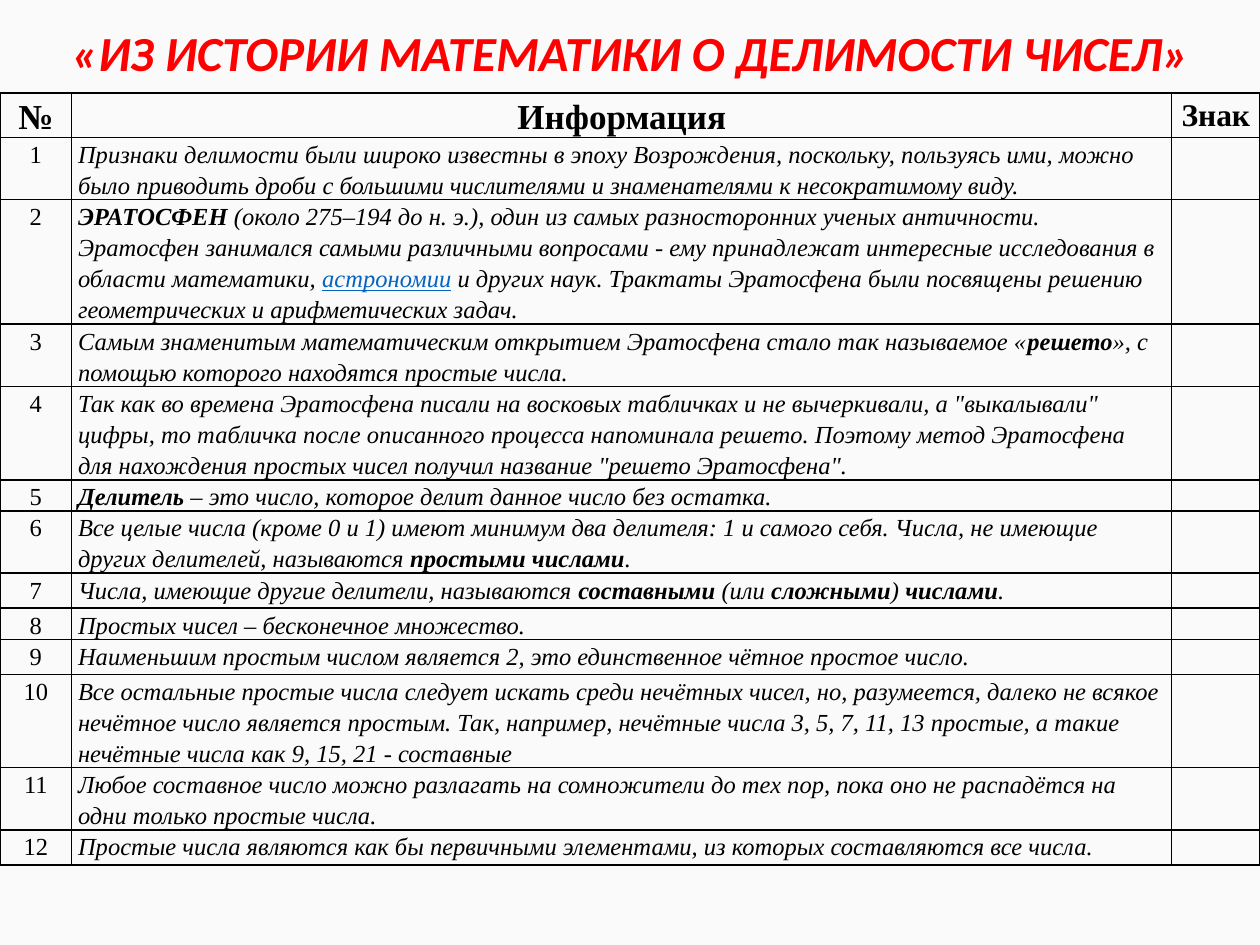
import pptx
import pptx.dml.color
import pptx.enum.text
import pptx.oxml.ns
import pptx.util
from lxml import etree

Pt = pptx.util.Pt
qn = pptx.oxml.ns.qn
ALIGN = pptx.enum.text.PP_ALIGN
ANCHOR = pptx.enum.text.MSO_ANCHOR

TITLE = "«ИЗ ИСТОРИИ МАТЕМАТИКИ О ДЕЛИМОСТИ ЧИСЕЛ»"
HEADINGS = [("№", 20), ("Информация", 20), ("Знак", 18)]
COLUMN_WIDTHS = [41, 628.6, 50.4]
HEADER_HEIGHT = 10
# Row height and text; *...* marks bold words, _..._ marks an underlined term.
FACTS = [
    (30, "Признаки делимости были широко известны в эпоху Возрождения, поскольку, "
         "пользуясь ими, можно было приводить дроби с большими числителями "
         "и знаменателями к несократимому виду."),
    (50, "*ЭРАТОСФЕН* (около 275–194 до н. э.), один из самых разносторонних ученых "
         "античности. Эратосфен занимался самыми различными вопросами - ему принадлежат "
         "интересные исследования в области математики, _астрономии_ и других наук. "
         "Трактаты Эратосфена были посвящены решению геометрических и арифметических задач."),
    (20, "Самым знаменитым математическим открытием Эратосфена стало так называемое "
         "«*решето*», с помощью которого находятся простые числа."),
    (40, "Так как во времена Эратосфена писали на восковых табличках и не вычеркивали, "
         "а \"выкалывали\" цифры, то табличка после описанного процесса напоминала решето. "
         "Поэтому метод Эратосфена для нахождения простых чисел получил название "
         "\"решето Эратосфена\"."),
    (10, "*Делитель* – это число, которое делит данное число без остатка."),
    (30, "Все целые числа (кроме 0 и 1) имеют минимум два делителя: 1 и самого себя. "
         "Числа, не имеющие других делителей, называются *простыми числами*."),
    (20, "Числа, имеющие другие делители, называются *составными* (или *сложными*) *числами*."),
    (10, "Простых чисел – бесконечное множество."),
    (20, "Наименьшим простым числом является 2, это единственное чётное простое число."),
    (40, "Все остальные простые числа следует искать среди нечётных чисел, но, разумеется, "
         "далеко не всякое нечётное число является простым. Так, например, нечётные числа "
         "3, 5, 7, 11, 13 простые, а такие нечётные числа как 9, 15, 21 - составные"),
    (20, "Любое составное число можно разлагать на сомножители до тех пор, пока оно "
         "не распадётся на одни только простые числа."),
    (20, "Простые числа являются как бы первичными элементами, из которых составляются "
         "все числа."),
]


def color(value):
    return pptx.dml.color.RGBColor.from_string(value)


class SlideBuilder:
    ink = "000000"
    accent = "FF0000"
    term = "0563C1"
    background = "FAFAFA"
    title_font = "Calibri"
    body_font = "Times New Roman"
    body_size = 14

    def __init__(self, presentation):
        self.slide = presentation.slides.add_slide(presentation.slide_layouts[5])
        fill = self.slide.background.fill
        fill.solid()
        fill.fore_color.rgb = color(self.background)

    def style(self, font, name, size, ink, bold=False, italic=False):
        font.name, font.size = name, Pt(size)
        font.bold, font.italic = bold, italic
        font.color.rgb = color(ink)

    def title(self, text, left, top, width, height):
        heading = self.slide.shapes.title
        heading.left, heading.top = Pt(left), Pt(top)
        heading.width, heading.height = Pt(width), Pt(height)
        frame = heading.text_frame
        frame.text = text
        frame.word_wrap = True
        frame.auto_size = pptx.enum.text.MSO_AUTO_SIZE.NONE
        frame.vertical_anchor = ANCHOR.MIDDLE
        paragraph = frame.paragraphs[0]
        paragraph.alignment = ALIGN.CENTER
        paragraph.line_spacing = 0.9
        self.style(paragraph.runs[0].font, self.title_font, 28, self.accent, True, True)

    def table(self, left, top, widths, heights):
        """Add a plain grid with thin borders and no fill."""
        grid = self.slide.shapes.add_table(
            len(heights), len(widths), Pt(left), Pt(top),
            Pt(sum(widths)), Pt(sum(heights))).table
        grid.first_row = grid.horz_banding = False
        for column, width in zip(grid.columns, widths):
            column.width = Pt(width)
        for row, height in zip(grid.rows, heights):
            row.height = Pt(height)
        for cell in grid.iter_cells():
            cell.margin_left = cell.margin_right = Pt(3.6)
            cell.margin_top = cell.margin_bottom = 0
            self.border(cell)
            cell.fill.background()
        return grid

    def border(self, cell):
        properties = cell._tc.get_or_add_tcPr()
        for side in ("a:lnL", "a:lnR", "a:lnT", "a:lnB"):
            line = etree.SubElement(properties, qn(side), w=str(Pt(1)))
            solid = etree.SubElement(line, qn("a:solidFill"))
            etree.SubElement(solid, qn("a:srgbClr"), val=self.ink)

    def cell_text(self, cell, text, size=body_size, bold=False, italic=False,
                  align=ALIGN.LEFT):
        paragraph = cell.text_frame.paragraphs[0]
        paragraph.alignment = align
        paragraph.line_spacing = 1.15
        for index, part in enumerate(text.replace("_", "*_").split("*")):
            # An underscore opens the term and a second one closes it.
            is_term = part.startswith("_") and "_" in text and index == text.replace(
                "_", "*_").split("*_")[0].count("*") + 1
            part = part.lstrip("_")
            if not part:
                continue
            run = paragraph.add_run()
            run.text = part
            emphasised = index % 2 == 1 and not is_term
            self.style(run.font, self.body_font, size,
                       self.term if is_term else self.ink, bold or emphasised, italic)
            if is_term:
                run.font.underline = True

    def blank(self, cell):
        """Keep an empty cell from growing its row."""
        etree.SubElement(cell.text_frame.paragraphs[0]._p, qn("a:endParaRPr"),
                         sz=str(self.body_size * 100))


def main():
    presentation = pptx.Presentation()
    presentation.slide_width, presentation.slide_height = Pt(720), Pt(540)
    builder = SlideBuilder(presentation)
    builder.title(TITLE, 0, 13.7, 720, 36.7)
    heights = [HEADER_HEIGHT] + [height for height, _ in FACTS]
    grid = builder.table(0, 53, COLUMN_WIDTHS, heights)
    for column, (heading, size) in enumerate(HEADINGS):
        builder.cell_text(grid.cell(0, column), heading, size, bold=True, align=ALIGN.CENTER)
    for number, (_, fact) in enumerate(FACTS, start=1):
        builder.cell_text(grid.cell(number, 0), str(number), align=ALIGN.CENTER)
        builder.cell_text(grid.cell(number, 1), fact, italic=True)
        builder.blank(grid.cell(number, 2))
    presentation.save("out.pptx")


if __name__ == "__main__":
    main()
